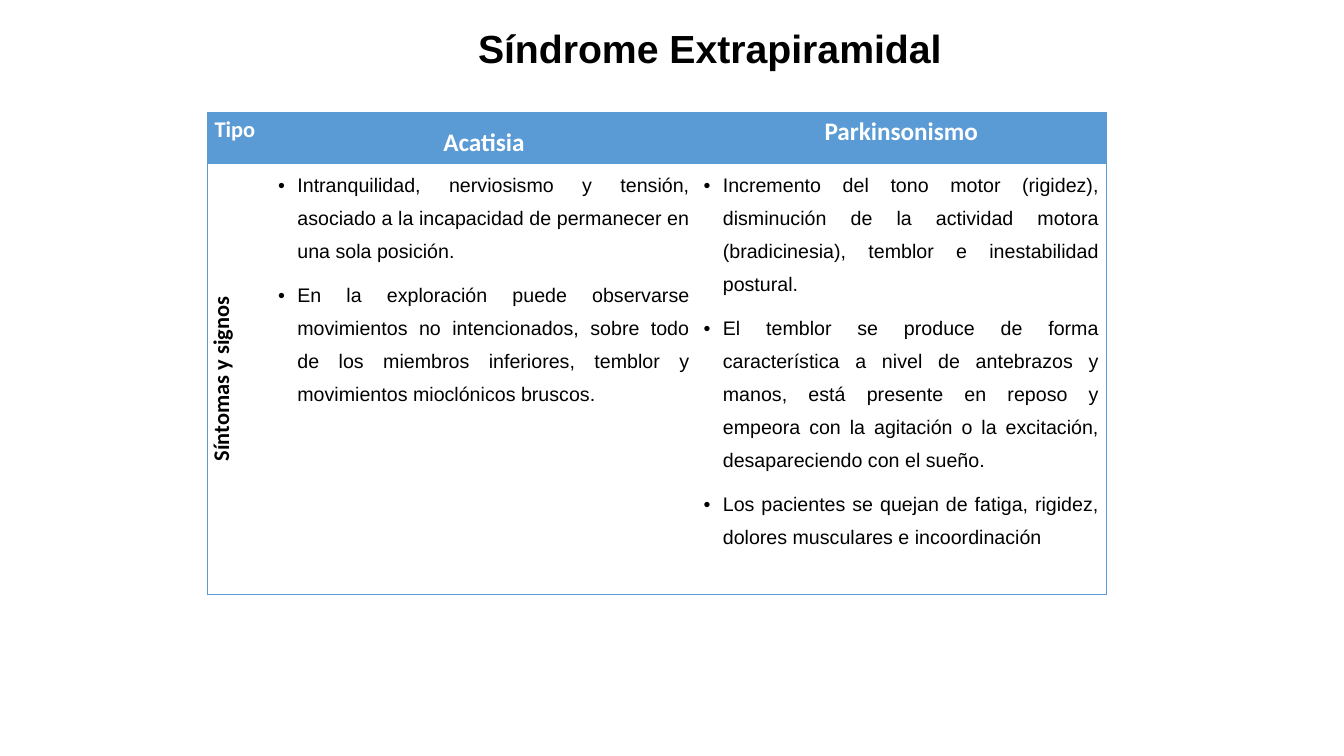
"""Build the slide comparing akathisia and parkinsonism symptoms."""
import pptx
import pptx.dml.color
import pptx.enum.text
import pptx.oxml
import pptx.oxml.ns
import pptx.util
from lxml import etree

Inches = pptx.util.Inches
Pt = pptx.util.Pt
ALIGN = pptx.enum.text.PP_ALIGN
COLORS = {"blue": "5B9BD5", "white": "FFFFFF", "black": "000000"}


def write_paragraph(para, text, color, font, layout):
    for name, value in layout.items():
        setattr(para, name, value)
    span = para.add_run()
    span.text = text
    for name, value in font.items():
        setattr(span.font, name, value)
    span.font.color.rgb = pptx.dml.color.RGBColor.from_string(COLORS[color])


def draw_borders(cell, visible_sides):
    properties = cell._tc.get_or_add_tcPr()
    for position, side in enumerate("LRTB"):
        line = etree.Element(pptx.oxml.ns.qn(f"a:ln{side}"), w=str(Pt(0.5)))
        if side in visible_sides:
            fill = etree.SubElement(line, pptx.oxml.ns.qn("a:solidFill"))
            etree.SubElement(fill, pptx.oxml.ns.qn("a:srgbClr"), val=COLORS["blue"])
        else:
            etree.SubElement(line, pptx.oxml.ns.qn("a:noFill"))
        properties.insert(position, line)


deck = pptx.Presentation()
deck.slide_width = Inches(13.33)
deck.slide_height = Inches(7.5)
page = deck.slides.add_slide(deck.slide_layouts[6])

title = page.shapes.add_textbox(Inches(1.29), Inches(0.21), Inches(11.5), Inches(0.59))
title.text_frame.word_wrap = True
title.text_frame.vertical_anchor = pptx.enum.text.MSO_ANCHOR.MIDDLE
write_paragraph(
    title.text_frame.paragraphs[0], "Síndrome Extrapiramidal", "black",
    {"name": "Arial", "size": Pt(28), "bold": True},
    {"alignment": ALIGN.CENTER, "line_spacing": 0.9},
)

label_font = {"name": "Calibri", "size": Pt(16), "bold": True}
heading_font = {"name": "Calibri", "size": Pt(18), "bold": True}
body_font = {"name": "Arial", "size": Pt(14), "bold": False}
after = {"space_after": Pt(8)}
bullet_layout = {"alignment": ALIGN.JUSTIFY, "line_spacing": 1.5, **after}

rows = [
    [
        (["Tipo"], label_font, {"alignment": ALIGN.LEFT, "line_spacing": 1.15, **after}),
        (["Acatisia"], heading_font, {"alignment": ALIGN.CENTER, "line_spacing": 1.5, **after}),
        (["Parkinsonismo"], heading_font, {"alignment": ALIGN.CENTER, "line_spacing": 1.15, **after}),
    ],
    [
        (["Síntomas y signos"], label_font, {"alignment": ALIGN.CENTER, **after}),
        ([
            "Intranquilidad, nerviosismo y tensión, asociado a la incapacidad de "
            "permanecer en una sola posición.",
            "En la exploración puede observarse movimientos no intencionados, sobre todo "
            "de los miembros inferiores, temblor y movimientos mioclónicos bruscos.",
        ], body_font, bullet_layout),
        ([
            "Incremento del tono motor (rigidez), disminución de la actividad motora "
            "(bradicinesia), temblor e inestabilidad postural.",
            "El temblor se produce de forma característica a nivel de antebrazos y manos, "
            "está presente en reposo y empeora con la agitación o la excitación, "
            "desapareciendo con el sueño.",
            "Los pacientes se quejan de fatiga, rigidez, dolores musculares e incoordinación",
        ], body_font, bullet_layout),
    ],
]

table = page.shapes.add_table(2, 3, Inches(2.06), Inches(1.11), Inches(8.91), Inches(4.79)).table
table.horz_banding = False
for column, width in zip(table.columns, [0.63, 4.22, 4.06]):
    column.width = Inches(width)
for row, height in zip(table.rows, [0.51, 4.28]):
    row.height = Inches(height)

margins = {"margin_left": 0.07, "margin_right": 0.07, "margin_top": 0, "margin_bottom": 0}
outer_sides = ["LTB", "TB", "RTB"]
for row_index, row in enumerate(rows):
    for column_index, (texts, font, layout) in enumerate(row):
        cell = table.cell(row_index, column_index)
        for name, value in margins.items():
            setattr(cell, name, Inches(value))
        if row_index == 0:
            cell.fill.solid()
            cell.fill.fore_color.rgb = pptx.dml.color.RGBColor.from_string(COLORS["blue"])
        else:
            cell.fill.background()
        draw_borders(cell, outer_sides[column_index])
        for index, text in enumerate(texts):
            para = cell.text_frame.add_paragraph() if index else cell.text_frame.paragraphs[0]
            write_paragraph(para, text, "black" if row_index else "white", font, layout)
            if layout is bullet_layout:
                properties = para._p.get_or_add_pPr()
                properties.set("marL", str(Inches(0.19)))
                properties.set("indent", str(Inches(-0.19)))
                bullet_font = etree.SubElement(properties, pptx.oxml.ns.qn("a:buFont"))
                bullet_font.set("typeface", "Arial")
                etree.SubElement(properties, pptx.oxml.ns.qn("a:buChar"), char="•")
table.cell(1, 0)._tc.get_or_add_tcPr().set("vert", "vert270")

deck.save("out.pptx")
